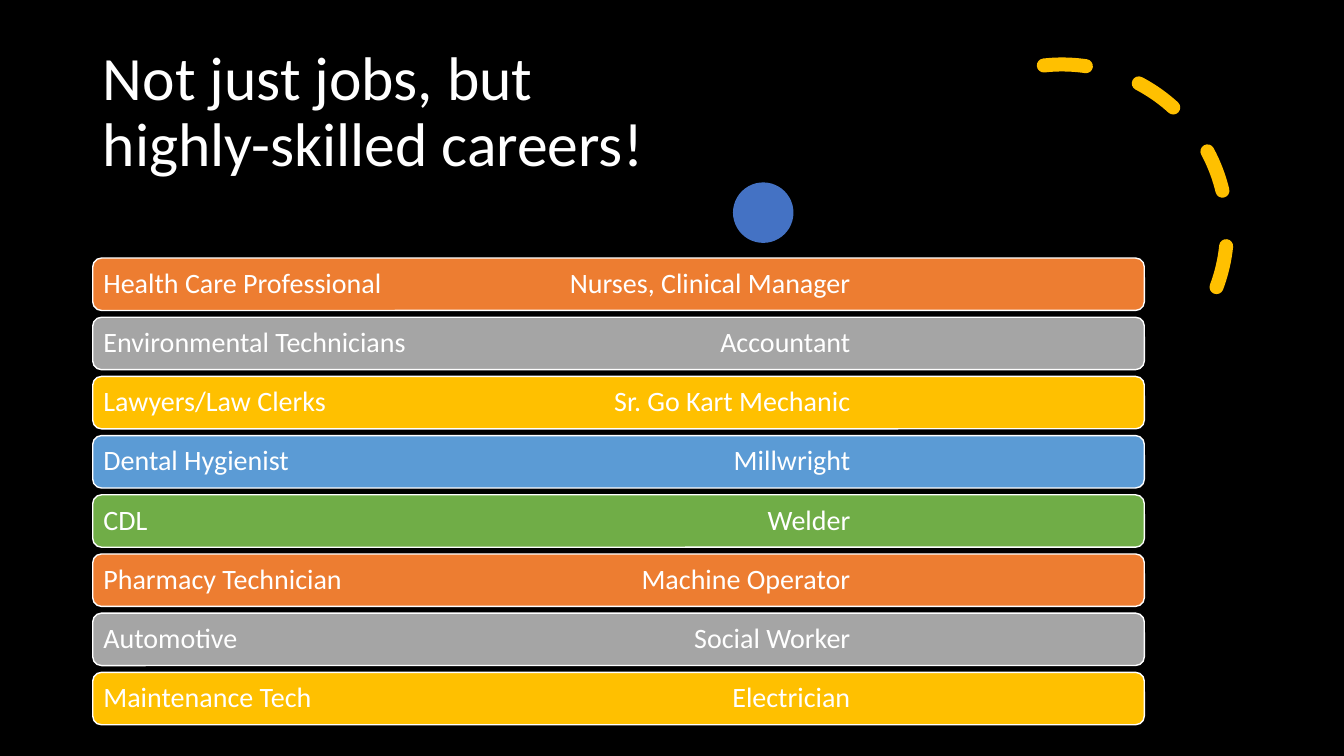
from lxml import etree
from pptx import Presentation
from pptx.dml.color import RGBColor
from pptx.enum.dml import MSO_LINE
from pptx.enum.shapes import MSO_SHAPE
from pptx.enum.text import MSO_ANCHOR, MSO_AUTO_SIZE, PP_ALIGN
from pptx.oxml.ns import qn
from pptx.util import Inches, Pt

OVAL, ARC, BAR = MSO_SHAPE.OVAL, MSO_SHAPE.ARC, MSO_SHAPE.ROUNDED_RECTANGLE
DASH, MIDDLE, LEFT = MSO_LINE.DASH, MSO_ANCHOR.MIDDLE, PP_ALIGN.LEFT
NO_FIT = MSO_AUTO_SIZE.NONE

BLACK = RGBColor(0x00, 0x00, 0x00)
WHITE = RGBColor(0xFF, 0xFF, 0xFF)
NAVY = RGBColor(0x44, 0x72, 0xC4)
ORANGE = RGBColor(0xED, 0x7D, 0x31)
GRAY = RGBColor(0xA5, 0xA5, 0xA5)
GOLD = RGBColor(0xFF, 0xC0, 0x00)
BLUE = RGBColor(0x5B, 0x9B, 0xD5)
GREEN = RGBColor(0x70, 0xAD, 0x47)
HUES = [ORANGE, GRAY, GOLD, BLUE, GREEN]

CAREERS = [
    ("Health Care Professional", "Nurses, Clinical Manager"),
    ("Environmental Technicians", "Accountant"),
    ("Lawyers/Law Clerks", "Sr. Go Kart Mechanic"),
    ("Dental Hygienist", "Millwright"),
    ("CDL", "Welder"),
    ("Pharmacy Technician", "Machine Operator"),
    ("Automotive", "Social Worker"),
    ("Maintenance Tech", "Electrician"),
]


def write(shape, text, size, inset=0.1, tab=None):
    """Fill a shape with left-aligned text; tab is a right tab stop in inches."""
    frame = shape.text_frame
    frame.word_wrap, frame.auto_size = True, NO_FIT
    frame.vertical_anchor = MIDDLE
    frame.margin_left = frame.margin_right = Inches(inset)
    frame.margin_top = frame.margin_bottom = Inches(0.05)
    para = frame.paragraphs[0]
    para.alignment, para.line_spacing = LEFT, 0.9
    run = para.add_run()
    run.text = text
    font = run.font
    font.name, font.size, font.color.rgb = "Calibri", Pt(size), WHITE
    if tab:
        stops = etree.SubElement(para._p.get_or_add_pPr(), qn("a:tabLst"))
        etree.SubElement(stops, qn("a:tab"), pos=str(Inches(tab)), algn="r")


def draw(slide, kind, box, fill=None, line=None, width=1):
    shape = slide.shapes.add_shape(kind, *map(Inches, box))
    shape.shadow.inherit = False
    if fill is None:
        shape.fill.background()
    else:
        shape.fill.solid()
        shape.fill.fore_color.rgb = fill
    if line is None:
        shape.line.fill.background()
    else:
        shape.line.color.rgb = line
        shape.line.width = Pt(width)
    return shape


def add_title(slide, box):
    title = slide.shapes.title
    title.left, title.top, title.width, title.height = map(Inches, box)
    write(title, "Not just jobs, but highly-skilled careers!", 44)


def add_decor(slide, box):
    """Place the dot at the lower left and the dashed arc at the right."""
    left, top, width, height = box
    dot, ring = 0.6, height
    draw(slide, OVAL, (left, top + 1.17, dot, dot), NAVY)
    arc = draw(slide, ARC, (left + width - ring, top, ring, ring), line=GOLD, width=10)
    arc.adjustments[0], arc.adjustments[1] = 158.17, 17.81
    arc.line.dash_style = DASH
    arc._element.spPr.find(qn("a:ln")).set("cap", "rnd")


def add_bars(slide, box):
    left, top, width, height = box
    tall = 0.52
    step = (height - tall) / (len(CAREERS) - 1)
    for i, pair in enumerate(CAREERS):
        hue = HUES[i % len(HUES)]
        bar = draw(slide, BAR, (left, top + i * step, width, tall), hue, WHITE)
        write(bar, "\t".join(pair), 20, inset=0.08, tab=7.41)


def main():
    deck = Presentation()
    deck.slide_width, deck.slide_height = Inches(13.33), Inches(7.5)
    slide = deck.slides.add_slide(deck.slide_layouts[5])
    slide.background.fill.solid()
    slide.background.fill.fore_color.rgb = BLACK
    add_title(slide, (0.92, 0.4, 5.89, 1.45))
    add_decor(slide, (7.27, 0.64, 4.9, 3.27))
    add_bars(slide, (0.92, 2.56, 10.43, 4.63))
    deck.save("out.pptx")


if __name__ == "__main__":
    main()
